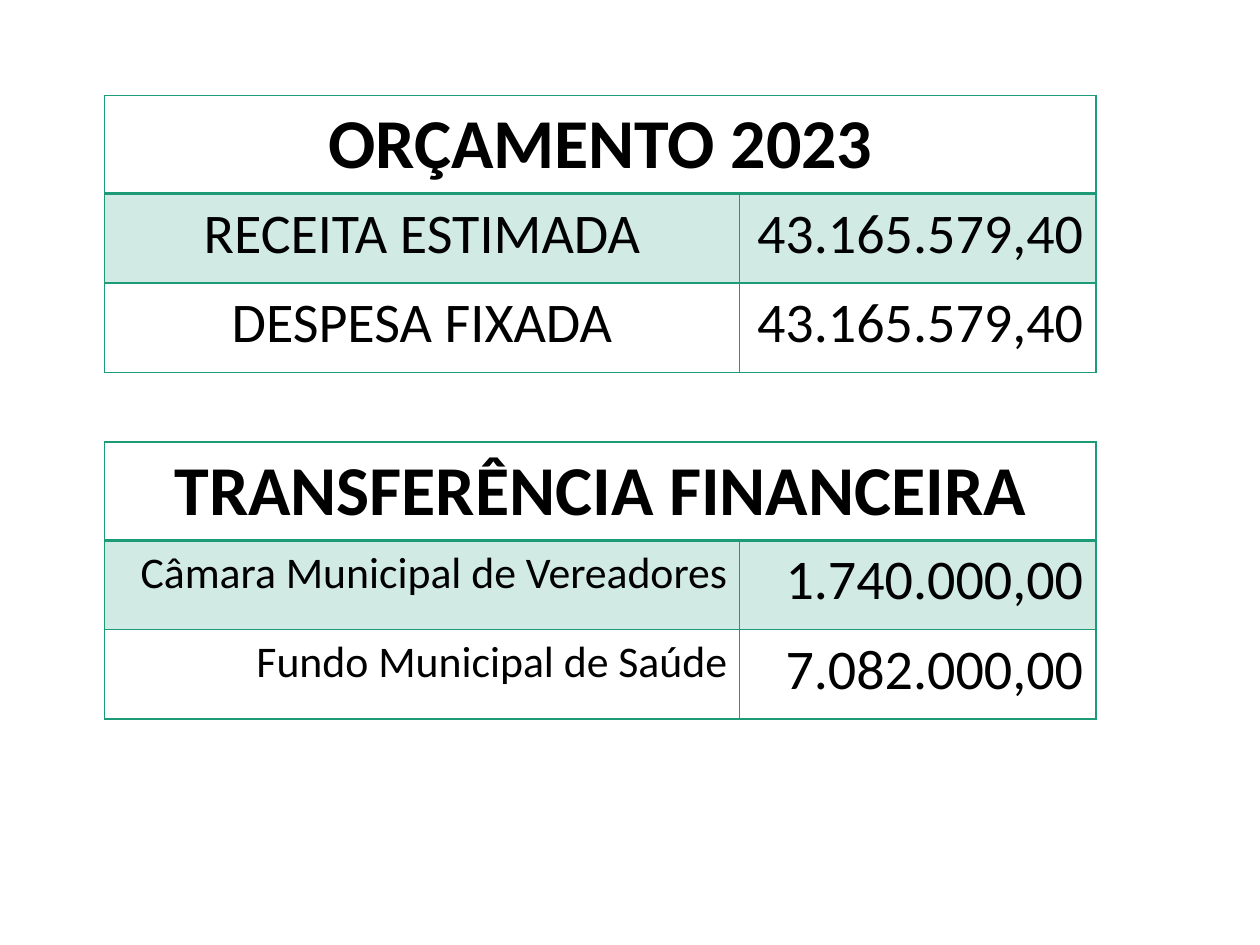
from dataclasses import dataclass

from lxml.etree import SubElement
from pptx import Presentation
from pptx.dml.color import RGBColor
from pptx.enum.text import PP_ALIGN as Align
from pptx.oxml.ns import qn
from pptx.slide import Slide
from pptx.table import _Cell as Cell
from pptx.util import Inches, Pt

GREEN = RGBColor(0x1D, 0x9A, 0x78)
BLACK = RGBColor(0, 0, 0)
FONT = "Calibri"
TABLE_LEFT = Inches(0.83)
COLUMN_WIDTHS = (Inches(5.04), Inches(2.83))
ROW_HEIGHT = Inches(0.71)
HEADING_SIZE, AMOUNT_SIZE = 40, 32
BAND_OPACITY = 20  # percent


@dataclass
class BudgetTable:
    top: float
    heading: str
    label_size: int
    label_align: Align
    rows: list[tuple[str, str]]


TABLES = [
    BudgetTable(0.76, "ORÇAMENTO 2023", 32, Align.CENTER, [
        ("RECEITA ESTIMADA", "43.165.579,40"),
        ("DESPESA FIXADA", "43.165.579,40"),
    ]),
    BudgetTable(3.51, "TRANSFERÊNCIA FINANCEIRA", 25, Align.RIGHT, [
        ("Câmara Municipal de Vereadores", "1.740.000,00"),
        ("Fundo Municipal de Saúde", "7.082.000,00"),
    ]),
]


def set_borders(cell: Cell, bottom: float = 1, top: float = 1) -> None:
    """Draw the four cell borders, with widths in points."""
    properties = cell._tc.get_or_add_tcPr()
    for side, width in {"L": 1, "R": 1, "T": top, "B": bottom}.items():
        line = SubElement(properties, qn(f"a:ln{side}"), w=str(Pt(width)))
        fill = SubElement(line, qn("a:solidFill"))
        SubElement(fill, qn("a:srgbClr"), val=str(GREEN))


def set_fill(cell: Cell, banded: bool) -> None:
    """Tint a banded cell with translucent green; leave any other clear."""
    if not banded:
        cell.fill.background()
        return
    cell.fill.solid()
    cell.fill.fore_color.rgb = GREEN
    color = cell._tc.tcPr.find(qn("a:solidFill")).find(qn("a:srgbClr"))
    SubElement(color, qn("a:alpha"), val=str(BAND_OPACITY * 1000))


def write(cell: Cell, text: str, size: int, align: Align, bold: bool = False) -> None:
    paragraph = cell.text_frame.paragraphs[0]
    paragraph.alignment = align
    run = paragraph.add_run()
    run.text = text
    font_format = {"name": FONT, "size": Pt(size), "bold": bold}
    for name, value in font_format.items():
        setattr(run.font, name, value)
    run.font.color.rgb = BLACK


def draw_table(slide: Slide, budget: BudgetTable) -> None:
    row_count = len(budget.rows) + 1
    table = slide.shapes.add_table(
        row_count, len(COLUMN_WIDTHS), TABLE_LEFT, Inches(budget.top),
        sum(COLUMN_WIDTHS), ROW_HEIGHT * row_count,
    ).table
    table.first_row = table.horz_banding = False
    for column, width in zip(table.columns, COLUMN_WIDTHS):
        column.width = width

    for index, row in enumerate(table.rows):
        row.height = ROW_HEIGHT
        for cell in row.cells:
            set_borders(cell, bottom=2 if index == 0 else 1, top=2 if index == 1 else 1)
            set_fill(cell, banded=index % 2 == 1)

    heading = table.cell(0, 0)
    heading.merge(table.cell(0, len(COLUMN_WIDTHS) - 1))
    write(heading, budget.heading, HEADING_SIZE, Align.CENTER, bold=True)
    for index, (label, amount) in enumerate(budget.rows, start=1):
        write(table.cell(index, 0), label, budget.label_size, budget.label_align)
        write(table.cell(index, 1), amount, AMOUNT_SIZE, Align.RIGHT)


def main() -> None:
    presentation = Presentation()
    presentation.slide_width = Inches(10)
    presentation.slide_height = Inches(7.5)
    blank_layout = presentation.slide_layouts[6]
    slide = presentation.slides.add_slide(blank_layout)
    for budget in TABLES:
        draw_table(slide, budget)
    presentation.save("out.pptx")


if __name__ == "__main__":
    main()
